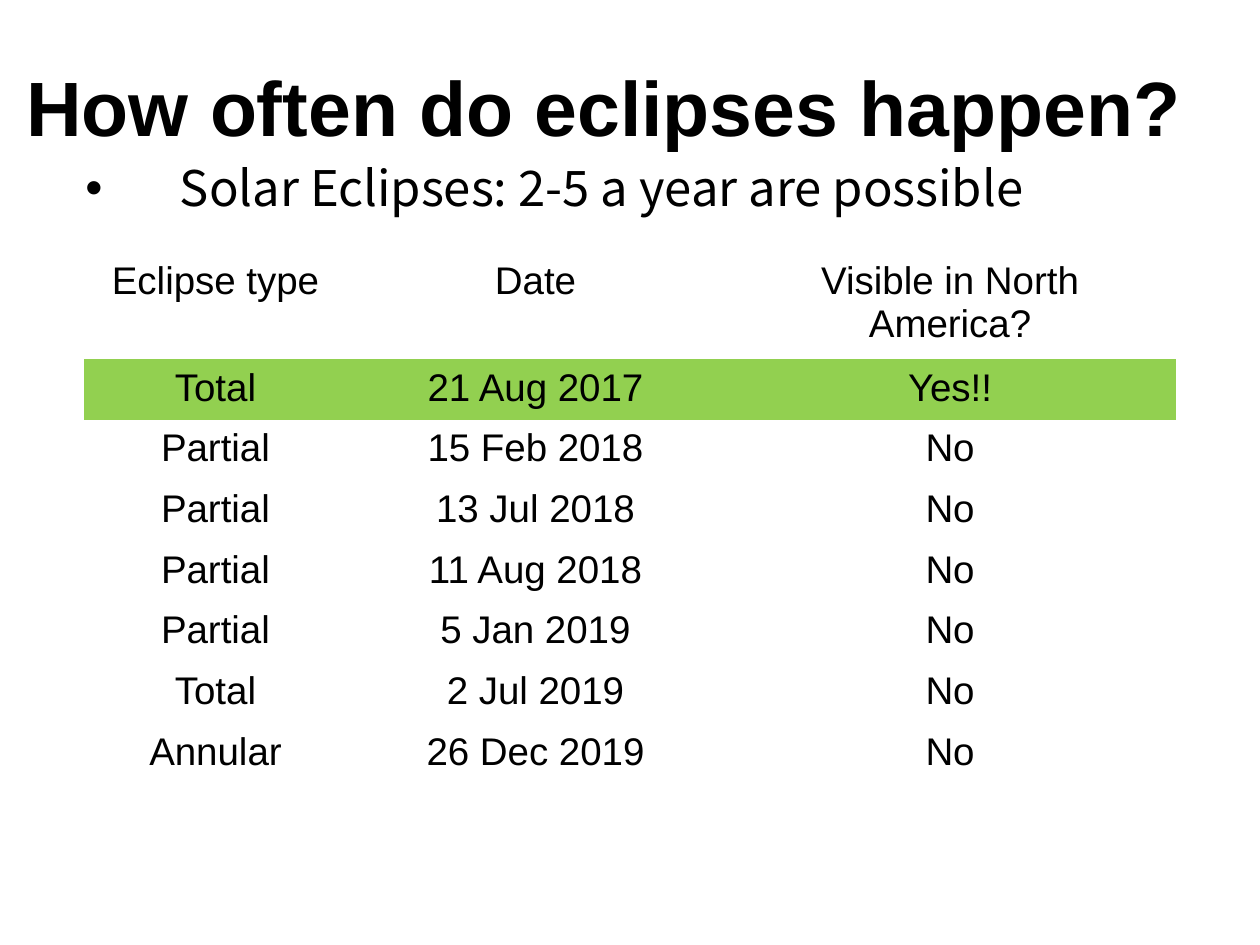
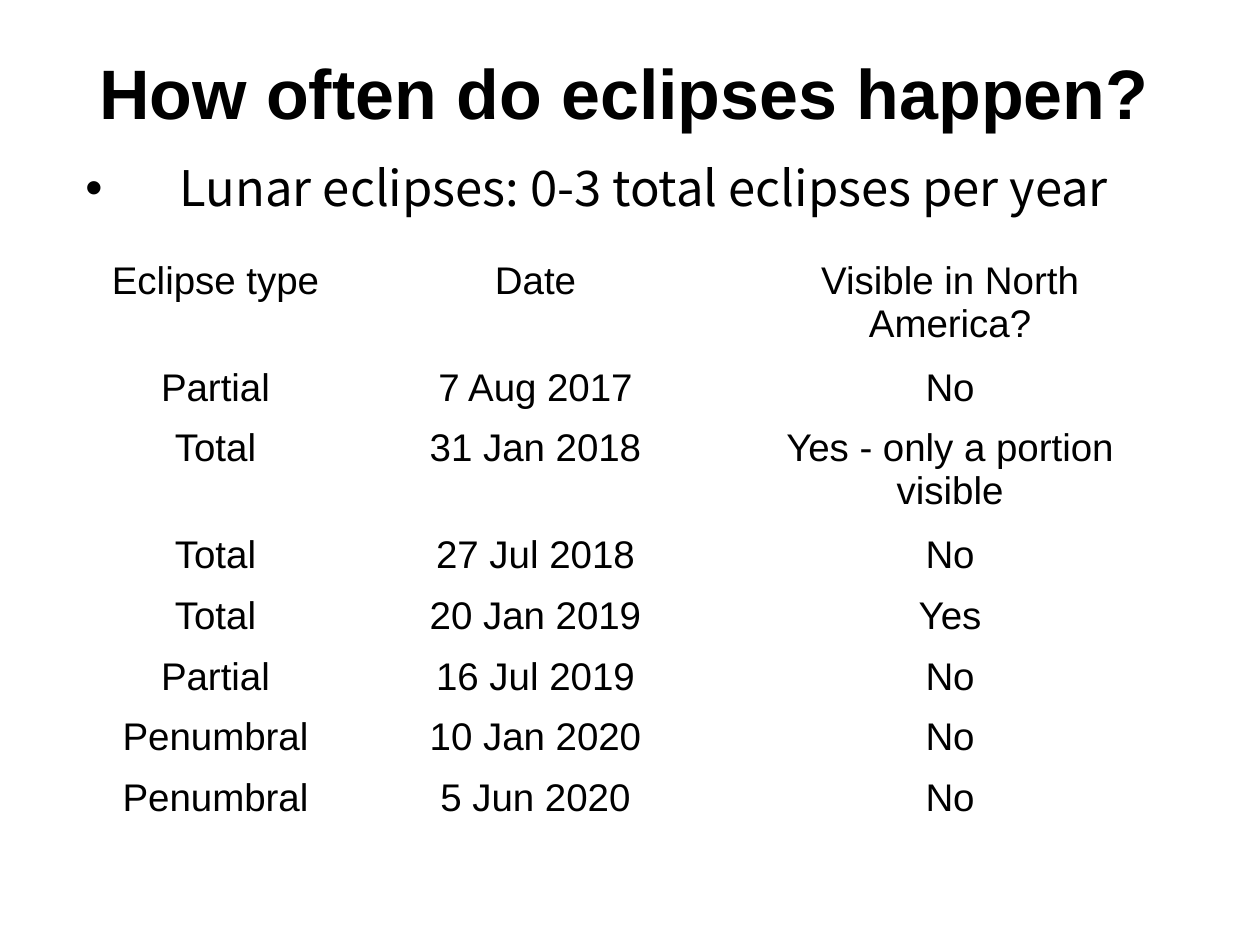
from lxml import etree
from pptx import Presentation, util as u
from pptx.dml.color import RGBColor
from pptx.enum import text
from pptx.oxml import ns

BLACK, HIGHLIGHT = "000000", "92D050"
HEADING_FONT, BODY_FONT = "Arial", "Noto Sans CJK KR"
NO_GRID_STYLE = "{2D5ABB26-0587-4C30-8999-92F81FD0307C}"
TITLE = "How often do eclipses happen?"
HEADINGS = ("Eclipse type", "Date", "Visible in North America?")
COLUMN_WIDTHS = (2.08, 3, 3.58)
ROW_HEIGHT = 0.42

SOLAR = [
    ("Total", "21 Aug 2017", "Yes!!"),
    ("Partial", "15 Feb 2018", "No"),
    ("Partial", "13 Jul 2018", "No"),
    ("Partial", "11 Aug 2018", "No"),
    ("Partial", "5 Jan 2019", "No"),
    ("Total", "2 Jul 2019", "No"),
    ("Annular", "26 Dec 2019", "No"),
]
LUNAR = [
    ("Partial", "7 Aug 2017", "No"),
    ("Total", "31 Jan 2018", "Yes - only a portion visible"),
    ("Total", "27 Jul 2018", "No"),
    ("Total", "20 Jan 2019", "Yes"),
    ("Partial", "16 Jul 2019", "No"),
    ("Penumbral", "10 Jan 2020", "No"),
    ("Penumbral", "5 Jun 2020", "No"),
]


def color(hex_code):
    """Return the colour for a hex string."""
    return RGBColor.from_string(hex_code)


def add_bullet(paragraph, indent):
    """Give a paragraph a hanging round bullet."""
    props = paragraph._p.get_or_add_pPr()
    props.set("marL", str(u.Inches(indent)))
    props.set("indent", str(u.Inches(-indent)))
    tint = etree.SubElement(props, ns.qn("a:buClr"))
    etree.SubElement(tint, ns.qn("a:srgbClr"), val=BLACK)
    etree.SubElement(props, ns.qn("a:buFont"), typeface=HEADING_FONT)
    etree.SubElement(props, ns.qn("a:buChar"), char="•")


def write(frame, words, size, font=HEADING_FONT, bold=False,
          align=text.PP_ALIGN.LEFT, spacing=None, bullet_indent=None):
    """Write one formatted paragraph into a text frame."""
    frame.word_wrap = True
    paragraph = frame.paragraphs[0]
    if bullet_indent:
        add_bullet(paragraph, bullet_indent)
    paragraph.alignment = align
    paragraph.line_spacing = spacing
    run = paragraph.add_run()
    run.text = words
    run.font.size = u.Pt(size)
    run.font.name = font
    run.font.bold = bold
    run.font.color.rgb = color(BLACK)
    for script in ("a:ea", "a:cs"):
        etree.SubElement(run.font._element, ns.qn(script), typeface=font)


class EclipseDeck:
    """Hold the deck style and the current slide."""

    def __init__(self):
        """Start an empty 10 by 7.5 inch deck."""
        self.deck = Presentation()
        self.deck.slide_width = u.Inches(10)
        self.deck.slide_height = u.Inches(7.5)
        self.slide = None

    def new_slide(self):
        """Add a blank slide and make it current."""
        self.slide = self.deck.slides.add_slide(self.deck.slide_layouts[6])

    def box(self, *place):
        """Add a text box and return its frame."""
        return self.slide.shapes.add_textbox(*map(u.Inches, place)).text_frame

    def title(self, place, size):
        """Add the bold slide title."""
        heading = self.box(*place)
        heading.vertical_anchor = text.MSO_ANCHOR.MIDDLE
        write(heading, TITLE, size, bold=True)

    def frequency(self, words):
        """Add the bulleted statement of how often eclipses occur."""
        write(self.box(0.58, 1.25, 9, 4.95), words, 28, font=BODY_FONT,
              spacing=0.9, bullet_indent=0.75)

    def eclipse_table(self, eclipses, highlighted=None):
        """Add the table of eclipses with an optional highlighted row."""
        rows = [HEADINGS, *eclipses]
        place = (0.67, 2, sum(COLUMN_WIDTHS), ROW_HEIGHT * len(rows))
        holder = self.slide.shapes.add_table(
            len(rows), len(HEADINGS), *map(u.Inches, place))
        holder._element.xpath(".//a:tableStyleId")[0].text = NO_GRID_STYLE
        calendar = holder.table
        calendar.first_row = calendar.horz_banding = False
        for column, width in zip(calendar.columns, COLUMN_WIDTHS):
            column.width = u.Inches(width)
        for number, (row, entries) in enumerate(zip(calendar.rows, rows)):
            row.height = u.Inches(ROW_HEIGHT)
            for cell, entry in zip(row.cells, entries):
                self.fill_cell(cell, entry, number == highlighted)

    def fill_cell(self, cell, entry, highlight):
        """Set the padding, fill and centred text of one cell."""
        padding = u.Inches(0.23)
        cell.margin_left = cell.margin_right = padding // 2
        cell.margin_top = cell.margin_bottom = padding // 4
        if highlight:
            cell.fill.solid()
            cell.fill.fore_color.rgb = color(HIGHLIGHT)
        else:
            cell.fill.background()
        write(cell.text_frame, entry, 22, align=text.PP_ALIGN.CENTER)


def main():
    """Build the solar and lunar eclipse slides."""
    show = EclipseDeck()

    show.new_slide()
    show.title((0.11, 0.21, 9.78, 1.25), 44)
    show.frequency("Solar Eclipses: 2-5 a year are possible")
    show.eclipse_table(SOLAR, highlighted=1)

    show.new_slide()
    show.title((0.69, 0, 8.62, 1.45), 40)
    show.frequency("Lunar eclipses: 0-3 total eclipses per year")
    show.eclipse_table(LUNAR)

    show.deck.save("out.pptx")


if __name__ == "__main__":
    main()
